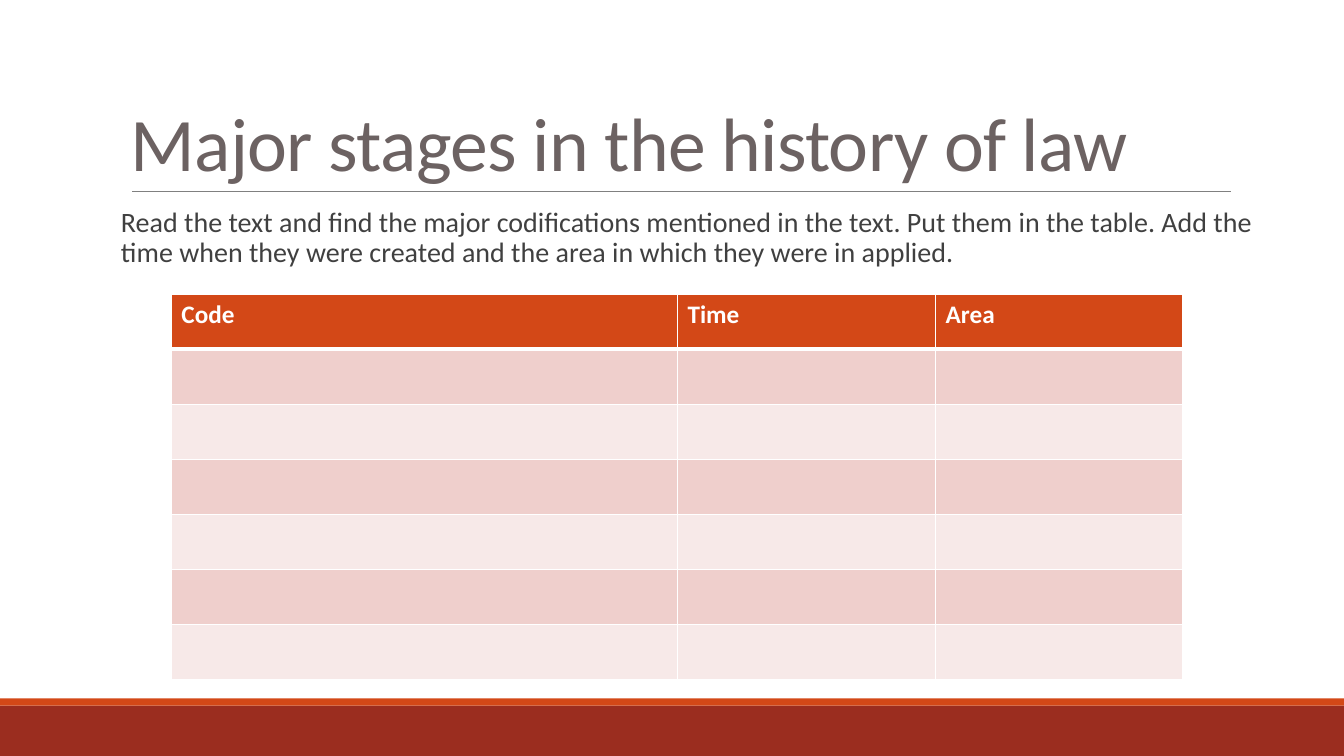
from lxml import etree
from pptx import Presentation
from pptx.dml.color import RGBColor
from pptx.enum.shapes import MSO_CONNECTOR, MSO_SHAPE
from pptx.enum.text import MSO_ANCHOR
from pptx.oxml import parse_xml
from pptx.oxml.ns import nsdecls, qn
from pptx.util import Inches, Pt

RECTANGLE = MSO_SHAPE.RECTANGLE
STRAIGHT = MSO_CONNECTOR.STRAIGHT
TOP, BOTTOM = MSO_ANCHOR.TOP, MSO_ANCHOR.BOTTOM

FONT = "Calibri"
COLORS = {
    "brick": "9B2D1F",
    "orange": "D34817",
    "rule": "808080",
    "title": "6C6262",
    "body": "404040",
    "white": "FFFFFF",
    "band_dark": "EFCFCC",
    "band_light": "F7E9E8",
}


def color(name):
    return RGBColor.from_string(COLORS[name])


def add_run(paragraph, text, size, color_name, bold=False):
    run = paragraph.add_run()
    run.text = text
    run.font.name = FONT
    run.font.size = Pt(size)
    run.font.bold = bold
    run.font.color.rgb = color(color_name)
    return run


prs = Presentation()
prs.slide_width = Inches(13.33)
prs.slide_height = Inches(7.5)
slide = prs.slides.add_slide(prs.slide_layouts[6])
shapes = slide.shapes

# Footer bands
for top, height, fill in ((7, 0.5, "brick"), (6.93, 0.07, "orange")):
    band = shapes.add_shape(RECTANGLE, 0, Inches(top), prs.slide_width, Inches(height))
    band.shadow.inherit = False
    band.fill.solid()
    band.fill.fore_color.rgb = color(fill)
    band.line.fill.background()

# Rule under the title
rule = shapes.add_connector(STRAIGHT, Inches(1.31), Inches(1.9), Inches(12.21), Inches(1.9))
rule.line.color.rgb = color("rule")
rule.line.width = Pt(0.5)
etree.SubElement(rule._element.spPr, qn("a:effectLst"))

# Title
title = shapes.add_textbox(Inches(1.2), Inches(0.31), Inches(11), Inches(1.59)).text_frame
title.word_wrap = True
title.vertical_anchor = BOTTOM
heading = title.paragraphs[0]
heading.line_spacing = 0.85
heading_run = add_run(heading, "Major stages in the history of law", 54, "title")
heading_run.font._element.set("spc", "-50")

# Task
task = shapes.add_textbox(Inches(1.2), Inches(2.02), Inches(11.55), Inches(0.8)).text_frame
task.word_wrap = True
task.vertical_anchor = TOP
task.margin_left = task.margin_right = 0
instruction = task.paragraphs[0]
instruction.line_spacing = 0.9
instruction.space_before = Pt(12)
instruction.space_after = Pt(2)
add_run(
    instruction,
    "Read the text and find the major codifications mentioned in the text. "
    "Put them in the table. Add the time when they were created and the area "
    "in which they were in applied.",
    20,
    "body",
)

# Table of codifications
headers = ("Code", "Time", "Area")
widths = (5.02, 2.56, 2.45)
row_count = 7
codes = shapes.add_table(
    row_count, len(headers), Inches(1.7), Inches(2.92), Inches(sum(widths)), Inches(3.82)
).table
for column, width in zip(codes.columns, widths):
    column.width = Inches(width)

for r in range(row_count):
    fill = "orange" if r == 0 else "band_dark" if r % 2 else "band_light"
    # The line between header and body is thicker
    borders = {"L": 1, "R": 1, "T": 3 if r == 1 else 1, "B": 3 if r == 0 else 1}
    for c, header in enumerate(headers):
        cell = codes.cell(r, c)
        cell.fill.solid()
        cell.fill.fore_color.rgb = color(fill)
        if r == 0:
            add_run(cell.text_frame.paragraphs[0], header, 18, "white", bold=True)
        for position, (side, points) in enumerate(borders.items()):
            border = parse_xml(
                f'<a:ln{side} {nsdecls("a")} w="{Pt(points)}"><a:solidFill>'
                f'<a:srgbClr val="{COLORS["white"]}"/></a:solidFill></a:ln{side}>'
            )
            cell._tc.get_or_add_tcPr().insert(position, border)

prs.save("out.pptx")
